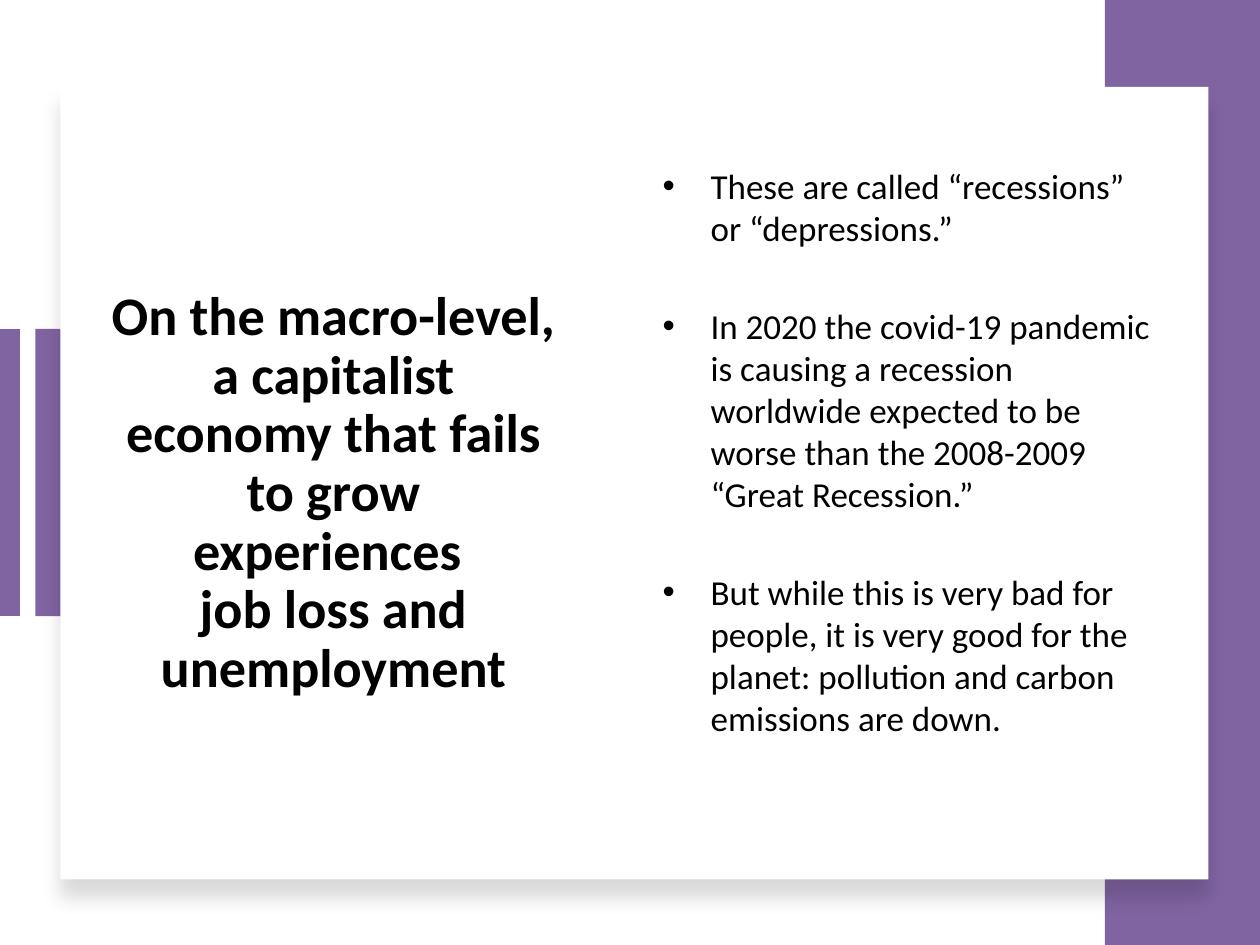
from copy import deepcopy

from lxml import etree
from pptx import Presentation
from pptx.dml.color import RGBColor
from pptx.enum.shapes import MSO_CONNECTOR, MSO_SHAPE
from pptx.enum.text import MSO_ANCHOR, MSO_AUTO_SIZE, PP_ALIGN
from pptx.oxml import parse_xml
from pptx.oxml.ns import nsdecls, qn
from pptx.util import Inches, Pt

RECT = MSO_SHAPE.RECTANGLE
LINE = MSO_CONNECTOR.STRAIGHT
MIDDLE = MSO_ANCHOR.MIDDLE
NO_FIT = MSO_AUTO_SIZE.NONE
CENTER, LEFT = PP_ALIGN.CENTER, PP_ALIGN.LEFT
PURPLE, WHITE, BLACK = "8064A2", "FFFFFF", "000000"


def color(code):
    return RGBColor.from_string(code)


def write(para, text, size=20, bold=False, align=LEFT, lines=1.0, before=0):
    para.text = text
    para.alignment = align
    para.line_spacing = lines
    para.space_before = Pt(before)
    for run in para.runs:
        font = run.font
        font.name, font.size, font.bold = "Calibri", Pt(size), bold
        font.color.rgb = color(BLACK)
    # A line break needs the run's format to keep the line height even
    for br in para._p.findall(qn("a:br")):
        br.append(deepcopy(para.runs[0]._r.rPr))


deck = Presentation()
deck.slide_width, deck.slide_height = Inches(10), Inches(7.5)
slide = deck.slides.add_slide(deck.slide_layouts[1])
shapes = slide.shapes

# Purple bars and white card, back to front
bars = [
    (0.28, 2.61, 0.25, 2.28, PURPLE),
    (8.77, 0, 1.23, 7.5, PURPLE),
    (0.48, 0.69, 9.11, 6.29, WHITE),
]
for left, top, width, height, fill in bars:
    card = shapes.add_shape(RECT, Inches(left), Inches(top), Inches(width), Inches(height))
    card.shadow.inherit = False
    card.fill.solid()
    card.fill.fore_color.rgb = color(fill)
    card.line.fill.background()

# Soft shadow below the card, the last shape made
glow = card._element.spPr.find(qn("a:effectLst"))
glow.append(parse_xml(
    f'<a:outerShdw {nsdecls("a")} blurRad="{Pt(11)}" dist="{Pt(10)}" dir="5400000" '
    f'algn="t" rotWithShape="0"><a:srgbClr val="{BLACK}"><a:alpha val="15000"/>'
    '</a:srgbClr></a:outerShdw>'))

edge = shapes.add_connector(LINE, Inches(0.06), Inches(2.61), Inches(0.06), Inches(4.89))
edge.line.color.rgb = color(PURPLE)
edge.line.width = Pt(14)
etree.SubElement(edge._element.spPr, qn("a:effectLst"))

# Title and list, brought in front of the card
title, body = shapes.title, slide.placeholders[1]
spots = [(title, 0.76, 1.36, 3.77, 5.12), (body, 5.16, 0.69, 4.08, 5.78)]
for holder, left, top, width, height in spots:
    holder.left, holder.top = Inches(left), Inches(top)
    holder.width, holder.height = Inches(width), Inches(height)
    frame = holder.text_frame
    frame.word_wrap = True
    frame.auto_size = NO_FIT
    frame.vertical_anchor = MIDDLE
    shapes._spTree.append(holder._element)

write(title.text_frame.paragraphs[0],
      "On the macro-level, a capitalist economy that fails to grow experiences \v"
      "job loss and unemployment",
      size=31, bold=True, align=CENTER, lines=0.9)

points = [
    "These are called “recessions” or “depressions.”",
    "In 2020 the covid-19 pandemic is causing a recession worldwide expected to be "
    "worse than the 2008-2009 “Great Recession.”",
    "But while this is very bad for people, it is very good for the planet: "
    "pollution and carbon emissions are down.",
]
frame = body.text_frame
for i, point in enumerate(points):
    para = frame.add_paragraph() if i else frame.paragraphs[0]
    write(para, point, before=32 if i else 4)
    props = para._p.get_or_add_pPr()
    props.set("marL", str(Inches(0.38)))
    props.set("indent", str(Inches(-0.38)))

deck.save("out.pptx")
